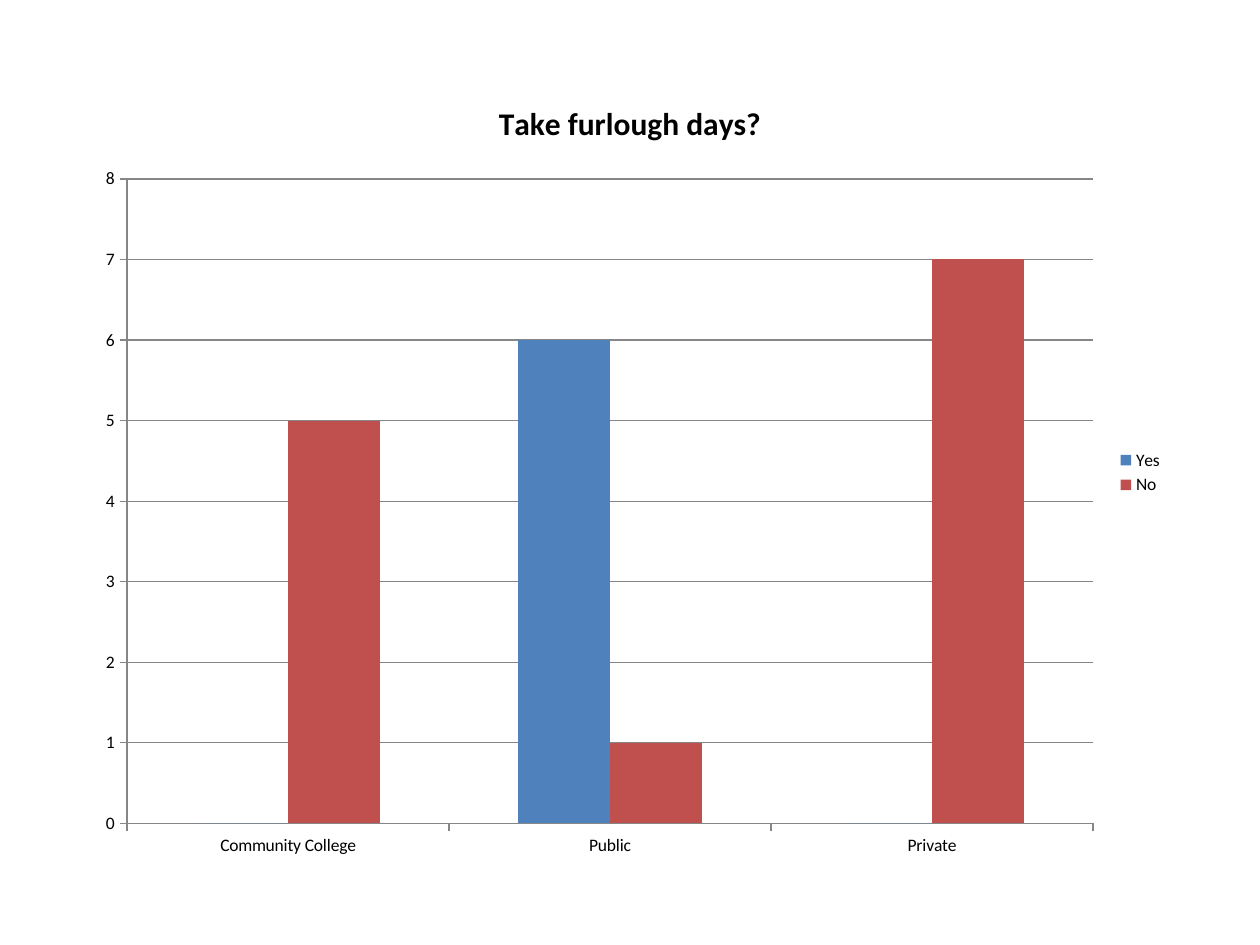
from pptx import Presentation
from pptx.chart.data import CategoryChartData
from pptx.dml.color import RGBColor
from pptx.enum.chart import XL_CHART_TYPE as Kind, XL_LEGEND_POSITION as Pos, XL_TICK_MARK as Tick
from pptx.util import Cm, Pt

TITLE = "Take furlough days?"
GROUPS = ["Community College", "Public", "Private"]
BLUE = RGBColor(0x4F, 0x81, 0xBD)
RED = RGBColor(0xC0, 0x50, 0x4D)
GRAY = RGBColor(0x86, 0x86, 0x86)
BLACK = RGBColor(0, 0, 0)
ANSWERS = [("Yes", (0, 6, 0), BLUE), ("No", (5, 1, 7), RED)]

WIDTH, HEIGHT = Cm(25.4), Cm(19.05)
CHART_W, CHART_H = Cm(22.01), Cm(16.09)


def style(font, size, bold=False):
    font.name = "Calibri"
    font.size = Pt(size)
    font.bold = bold
    font.color.rgb = BLACK


deck = Presentation()
deck.slide_width, deck.slide_height = WIDTH, HEIGHT
slide = deck.slides.add_slide(deck.slide_layouts[6])

data = CategoryChartData()
data.categories = GROUPS
for name, counts, _ in ANSWERS:
    data.add_series(name, counts)

left, top = (WIDTH - CHART_W) // 2, (HEIGHT - CHART_H) // 2
chart = slide.shapes.add_chart(
    Kind.COLUMN_CLUSTERED, left, top, CHART_W, CHART_H, data).chart
style(chart.font, 10)

chart.has_title = True
chart.chart_title.include_in_layout = False
frame = chart.chart_title.text_frame
frame.text = TITLE
style(frame.paragraphs[0].font, 18, bold=True)

chart.has_legend = True
chart.legend.position = Pos.RIGHT
chart.legend.include_in_layout = False

plot = chart.plots[0]
plot.gap_width = 150
plot.overlap = 0
plot.vary_by_categories = False
for series, (_, _, color) in zip(plot.series, ANSWERS):
    series.format.fill.solid()
    series.format.fill.fore_color.rgb = color

for axis in (chart.category_axis, chart.value_axis):
    axis.major_tick_mark = Tick.OUTSIDE
    axis.minor_tick_mark = Tick.NONE
    axis.format.line.color.rgb = GRAY

scale = chart.value_axis
scale.minimum_scale, scale.maximum_scale, scale.major_unit = 0, 8, 1
scale.has_major_gridlines = True
scale.major_gridlines.format.line.color.rgb = GRAY

deck.save("out.pptx")
